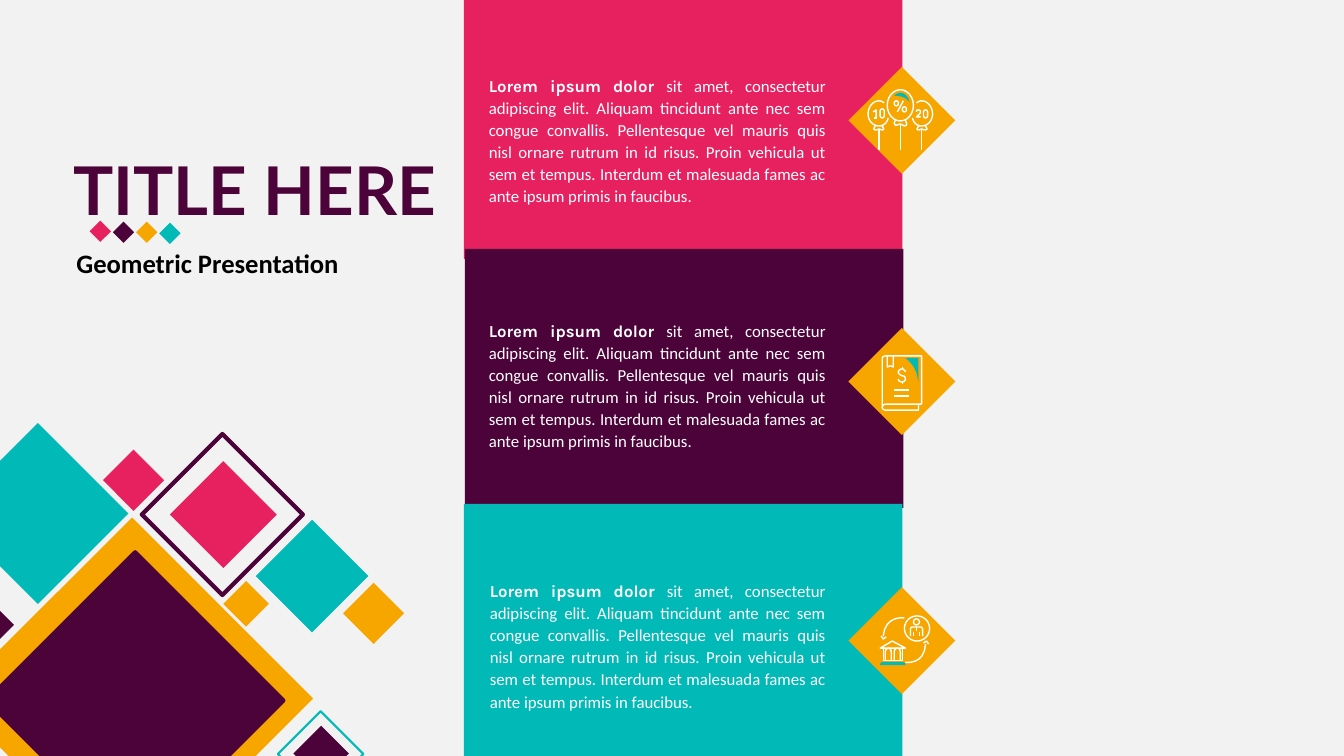
from lxml import etree
from pptx import Presentation
from pptx.dml.color import RGBColor
from pptx.enum.shapes import MSO_CONNECTOR, MSO_SHAPE
from pptx.enum.text import MSO_AUTO_SIZE, PP_ALIGN
from pptx.oxml.ns import qn
from pptx.util import Pt

PX = 9144  # 100 px to the inch
SLIDE_SIZE = (1333, 750)

RECTANGLE, OVAL = MSO_SHAPE.RECTANGLE, MSO_SHAPE.OVAL
PILL = MSO_SHAPE.ROUNDED_RECTANGLE
STRAIGHT = MSO_CONNECTOR.STRAIGHT
FIT_SHAPE = MSO_AUTO_SIZE.SHAPE_TO_FIT_TEXT
LEFT, JUSTIFY = PP_ALIGN.LEFT, PP_ALIGN.JUSTIFY

GREY = RGBColor(0xF2, 0xF2, 0xF2)
WHITE = RGBColor(0xFF, 0xFF, 0xFF)
BLACK = RGBColor(0x00, 0x00, 0x00)
PINK = RGBColor(0xE7, 0x20, 0x5F)
PURPLE = RGBColor(0x4C, 0x03, 0x39)
AMBER = RGBColor(0xF7, 0xA6, 0x00)
TEAL = RGBColor(0x01, 0xB9, 0xB7)

TITLE = "TITLE HERE"
SUBTITLE = "Geometric Presentation"
LEAD = "Lorem ipsum dolor "
BODY = (
    "sit amet, consectetur adipiscing elit. Aliquam tincidunt ante nec sem "
    "congue convallis. Pellentesque vel mauris quis nisl ornare rutrum in id "
    "risus. Proin vehicula ut sem et tempus. Interdum et malesuada fames ac "
    "ante ipsum primis in faucibus."
)

# left, top, side, fill, line colour, line points
CORNER_DIAMONDS = [
    (4, 566, 254, AMBER, None, 0),
    (-102, 572, 96, PURPLE, None, 0),
    (-26, 446, 127, TEAL, None, 0),
    (164, 454, 113, None, PURPLE, 3),
    (228, 583, 32, AMBER, None, 0),
    (349, 587, 43, AMBER, None, 0),
    (111, 455, 43, PINK, None, 0),
    (270, 532, 79, TEAL, None, 0),
    (288, 718, 60, None, TEAL, 1.5),
    (299, 728, 39, PURPLE, None, 0),
    (30, 591, 208, PURPLE, PURPLE, 3),
    (184, 473, 75, PINK, None, 0),
]
TITLE_DIAMONDS = [(222, PINK), (223, PURPLE), (223, AMBER), (224, TEAL)]

# panel left, panel top, fill, text left, text top, text width, badge top
PANELS = [
    (460, 0, PINK, 475, 68, 354, 82),
    (461, 247, PURPLE, 475, 311, 354, 341),
    (460, 500, TEAL, 476, 569, 353, 598),
]

# Paths use M (move), L (line), C (cubic curve) and Z (close)
RIGHT_BALLOON = [
    "M 909 102 C 911 101 912 100 914 100 C 920 100 925 106 925 113 "
    "C 925 120 920 125 914 125 C 910 125 906 122 905 117",
    "M 918 125 L 919 127 C 920 128 919 129 917 129 L 914 128 L 911 129 "
    "C 910 129 909 128 910 127 L 911 125",
]
BALLOON_ICON = {
    "mirror": 893,
    "mirrored_paths": RIGHT_BALLOON,
    "mirrored_lines": [(914, 128, 914, 149)],
    "paths": [
        "M 898 119 L 899 122 C 900 124 898 125 897 125 L 893 123 L 890 124 "
        "C 888 125 887 123 887 122 L 888 119",
        "M 869 117 L 869 109 L 866 111",
        "M 909 111 C 909 110 909 109 911 109 C 912 109 913 110 913 111 "
        "C 913 112 912 113 912 113 C 911 114 910 115 909 116 L 913 116",
    ],
    "lines": [(890, 111, 896, 100), (893, 123, 893, 149), (867, 117, 870, 117)],
    "shapes": [(OVAL, 880, 89, 26, 31), (PILL, 895, 106, 4, 5), (PILL, 887, 100, 4, 5),
               (PILL, 873, 108, 4, 9), (PILL, 916, 109, 4, 8)],
    "accent": "M 902 101 C 901 96 897 92 893 92 C 891 92 889 93 887 95 "
              "C 892 95 898 96 902 101 Z",
}
BOOK_ICON = {
    "paths": [
        "M 891 376 C 891 378 893 379 895 379 C 896 379 898 378 898 376 "
        "C 898 374 897 373 895 373 C 893 372 891 371 891 369 "
        "C 891 368 893 366 895 366 C 896 366 898 368 898 369",
        "M 880 353 L 880 364 L 883 363 L 886 364 L 886 353",
        "M 879 353 C 877 353 875 354 875 356 L 875 404 C 875 402 877 401 879 401 "
        "L 914 401 L 914 353 Z",
        "M 875 404 C 875 406 877 407 879 407 L 911 407 L 911 401",
    ],
    "lines": [(895, 364, 895, 366), (895, 379, 895, 381),
              (887, 387, 902, 387), (887, 393, 902, 393)],
    "accent": "M 911 379 L 911 355 L 898 355 C 903 359 907 364 909 370 Z",
}
BANK_ICON = {
    "paths": [
        "M 898 657 C 898 657 917 660 918 639",
        "M 916 638 L 919 636 L 921 639",
        "M 897 613 C 897 613 878 610 876 631",
        "M 879 632 L 876 634 L 874 631",
        "M 898 643 L 885 636 L 873 643 Z",
        "M 876 641 L 876 655 L 895 655 L 895 641",
        "M 878 655 L 878 647 C 878 645 880 643 881 643 C 883 643 884 645 884 647 L 884 655",
        "M 893 655 L 893 647 C 893 645 892 643 890 643 C 888 643 887 645 887 647 L 887 655",
        "M 903 631 L 903 624 C 903 623 904 622 905 622 L 913 622 "
        "C 914 622 915 623 915 624 L 915 631",
    ],
    "lines": [(912, 627, 912, 631), (906, 627, 906, 631), (909, 622, 909, 626)],
    "shapes": [(OVAL, 906, 614, 6, 6), (OVAL, 897, 611, 25, 25)],
    "accent": "M 898 660 L 873 660 L 873 659 C 873 658 874 657 875 657 L 896 657 "
              "C 897 657 898 658 898 659 Z",
}


def paint(shape, fill=None, line=None, points=1):
    shape.shadow.inherit = False
    if fill is None:
        shape.fill.background()
    else:
        shape.fill.solid()
        shape.fill.fore_color.rgb = fill
    if line is None:
        shape.line.fill.background()
    else:
        shape.line.color.rgb = line
        shape.line.width = Pt(points)


def add_figure(shapes, preset, left, top, width, height, rotation=0, **colours):
    shape = shapes.add_shape(preset, left * PX, top * PX, width * PX, height * PX)
    shape.rotation = rotation
    if preset == PILL:
        shape.adjustments[0] = 0.5
    paint(shape, **colours)


def add_diamond(shapes, left, top, side, **colours):
    add_figure(shapes, RECTANGLE, left, top, side, side, rotation=45, **colours)


def add_line(shapes, x1, y1, x2, y2):
    line = shapes.add_connector(STRAIGHT, x1 * PX, y1 * PX, x2 * PX, y2 * PX)
    line.line.color.rgb = WHITE
    line.line.width = Pt(1)
    etree.SubElement(line._element.spPr, qn("a:effectLst"))


def add_path(shapes, path, mirror=None, **colours):
    """Draw a path, its curves cut into short lines; mirror is an x axis."""
    points, numbers, command = [], [], ""
    for token in path.split():
        if token.isalpha():
            command = token
            continue
        numbers.append(int(token))
        if len(numbers) < (6 if command == "C" else 2):
            continue
        pairs = list(zip(numbers[::2], numbers[1::2]))
        if command == "C":
            controls = [points[-1]] + pairs
            for step in range(1, 9):
                t = step / 8
                weights = ((1 - t) ** 3, 3 * t * (1 - t) ** 2, 3 * t * t * (1 - t), t ** 3)
                points.append(tuple(sum(w * c[axis] for w, c in zip(weights, controls))
                                    for axis in (0, 1)))
        else:
            points += pairs
        numbers = []
    if mirror is not None:
        points = [(2 * mirror - x, y) for x, y in points]
    corners = [(round(x * PX), round(y * PX)) for x, y in points]
    builder = shapes.build_freeform(*corners[0], scale=1.0)
    builder.add_line_segments(corners[1:], close=path.endswith("Z"))
    paint(builder.convert_to_shape(), **colours)


def add_icon(shapes, icon):
    group = shapes.add_group_shape().shapes
    axis = icon.get("mirror")
    for path in icon.get("mirrored_paths", []):
        add_path(group, path, line=WHITE)
        add_path(group, path, mirror=axis, line=WHITE)
    for x1, y1, x2, y2 in icon.get("mirrored_lines", []):
        add_line(group, x1, y1, x2, y2)
        add_line(group, 2 * axis - x1, y1, 2 * axis - x2, y2)
    for path in icon["paths"]:
        add_path(group, path, line=WHITE)
    for ends in icon["lines"]:
        add_line(group, *ends)
    for figure in icon.get("shapes", []):
        add_figure(group, *figure, line=WHITE)
    add_path(group, icon["accent"], fill=TEAL)


def add_text(shapes, box, runs, size, colour, align=LEFT, spacing=None, wrap=False):
    """Add a one-paragraph text box; runs are (text, font name, bold)."""
    frame = shapes.add_textbox(*(length * PX for length in box)).text_frame
    frame.word_wrap = wrap
    frame.auto_size = FIT_SHAPE
    paragraph = frame.paragraphs[0]
    paragraph.alignment = align
    paragraph.line_spacing = spacing
    for text, font_name, bold in runs:
        run = paragraph.add_run()
        run.text = text
        run.font.name = font_name
        run.font.size = Pt(size)
        run.font.bold = bold
        run.font.color.rgb = colour


def main():
    presentation = Presentation()
    presentation.slide_width, presentation.slide_height = (side * PX for side in SLIDE_SIZE)
    slide = presentation.slides.add_slide(presentation.slide_layouts[6])
    slide.background.fill.solid()
    slide.background.fill.fore_color.rgb = GREY
    shapes = slide.shapes

    corner = shapes.add_group_shape().shapes
    for left, top, side, fill, line, points in CORNER_DIAMONDS:
        add_diamond(corner, left, top, side, fill=fill, line=line, points=points)

    add_text(shapes, (63, 142, 393, 91), [(TITLE, "Lato", True)], 48, PURPLE)
    add_text(shapes, (66, 240, 284, 42), [(SUBTITLE, "Calibri", True)], 19, BLACK)

    for left, top, fill, *_ in PANELS:
        add_figure(shapes, RECTANGLE, left, top, 435, 257, fill=fill)
    for *_, left, top, width, badge_top in PANELS:
        add_text(shapes, (left, top, width, 142),
                 [(LEAD, "Karla", True), (BODY, "Calibri", False)],
                 12, WHITE, align=JUSTIFY, spacing=1.1, wrap=True)
        add_diamond(shapes, 857, badge_top, 75, fill=AMBER)

    underline = shapes.add_group_shape().shapes
    for index, (top, fill) in enumerate(TITLE_DIAMONDS):
        add_diamond(underline, 92 + 23 * index, top, 15, fill=fill)

    for icon in (BOOK_ICON, BALLOON_ICON, BANK_ICON):
        add_icon(shapes, icon)

    presentation.save("out.pptx")


if __name__ == "__main__":
    main()
